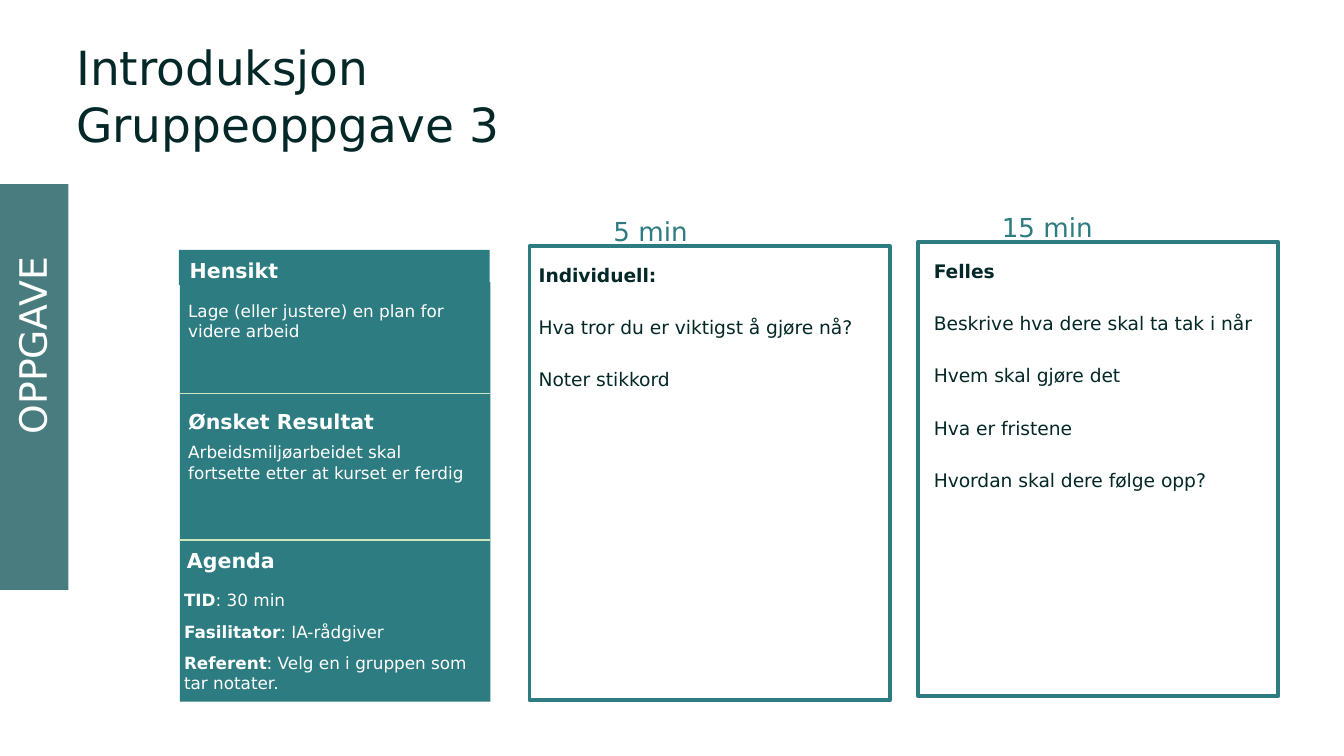
from lxml.etree import SubElement
from pptx import Presentation
from pptx.dml.color import RGBColor
from pptx.enum.shapes import MSO_CONNECTOR, MSO_SHAPE
from pptx.enum.text import MSO_ANCHOR
from pptx.oxml.ns import qn
from pptx.util import Pt

FONT = "DejaVu Sans"
TEAL = "2D7C81"
GREY_TEAL = "497C7F"
DARK = "042827"
WHITE = "FFFFFF"
PALE_GREEN = "CFE5BD"


def color(value):
    """Turn a hex string into a colour."""
    return RGBColor.from_string(value)


def add_rectangle(slide, left, top, width, height, fill=None, line=None):
    """Add a plain rectangle with an optional fill and outline."""
    shape = slide.shapes.add_shape(
        MSO_SHAPE.RECTANGLE, Pt(left), Pt(top), Pt(width), Pt(height))
    shape.shadow.inherit = False
    if fill:
        shape.fill.solid()
        shape.fill.fore_color.rgb = color(fill)
    else:
        shape.fill.background()
    if line:
        shape.line.color.rgb = color(line)
        shape.line.width = Pt(2)
    else:
        shape.line.fill.background()
    return shape


def add_text(slide, box, paragraphs, size, ink, margins=(7.2, 3.6, 7.2, 3.6),
             anchor=MSO_ANCHOR.TOP, line_spacing=None, before=0, after=0):
    """Add a text box whose paragraphs are lists of (text, bold) runs."""
    shape = slide.shapes.add_textbox(*map(Pt, box))
    frame = shape.text_frame
    frame.word_wrap = True
    frame.vertical_anchor = anchor
    (frame.margin_left, frame.margin_top,
     frame.margin_right, frame.margin_bottom) = map(Pt, margins)
    for index, runs in enumerate(paragraphs):
        paragraph = frame.add_paragraph() if index else frame.paragraphs[0]
        paragraph.space_before = Pt(before)
        paragraph.space_after = Pt(after)
        if line_spacing:
            paragraph.line_spacing = line_spacing
        for text, bold in runs:
            run = paragraph.add_run()
            run.text = text
            run.font.name = FONT
            run.font.size = Pt(size)
            run.font.bold = bold
            run.font.color.rgb = color(ink)
    return shape


def add_divider(slide, left, top, width):
    """Add a thin horizontal line."""
    connector = slide.shapes.add_connector(
        MSO_CONNECTOR.STRAIGHT, Pt(left), Pt(top), Pt(left + width), Pt(top))
    connector.line.color.rgb = color(PALE_GREEN)
    connector.line.width = Pt(0.75)
    SubElement(connector.element.spPr, qn("a:effectLst"))


def add_title(slide, left, top, width, height):
    """Add the two-line slide title."""
    lines = ["Introduksjon", "Gruppeoppgave 3"]
    add_text(slide, (left, top, width, height), [[(line, False)] for line in lines],
             25.2, DARK, margins=(7.2,) * 4, anchor=MSO_ANCHOR.MIDDLE)


def add_side_tab(slide, left, top, width, height):
    """Add the tab at the slide edge with its upright label."""
    add_rectangle(slide, left, top, width, height, GREY_TEAL)
    label = add_text(slide, (left - 46.8, top + 61.2, 128, 31.7),
                     [[("OPPGAVE", False)]], 20.2, WHITE)
    label.rotation = 270


def add_overview(slide, left, top, width, height):
    """Add the filled column with purpose, result and agenda."""
    add_rectangle(slide, left + 0.5, top + 17.3, width, height - 17.3, TEAL)
    add_rectangle(slide, left, top, width, 18.7, TEAL)
    sections = [
        ("Hensikt", 5.7, 17.3, -2.2, 23.8,
         [[("Lage (eller justere) en plan for videre arbeid", False)]]),
        ("Ønsket Resultat", 5, 98.6, -2.2, 99.4,
         [[("Arbeidsmiljøarbeidet skal fortsette etter at kurset er ferdig", False)]]),
        ("Agenda", 4.3, 172.8, -4.4, 178.6,
         [[("TID", True), (": 30 min", False)],
          [("Fasilitator", True), (": IA-rådgiver", False)],
          [("Referent", True), (": Velg en i gruppen som tar notater.", False)]]),
    ]
    for heading, heading_left, heading_bottom, body_left, body_top, body in sections:
        add_text(slide, (left + heading_left, top + heading_bottom - 18, 130, 18),
                 [[(heading, True)]], 11, WHITE, margins=(0, 0.7, 0, 0),
                 anchor=MSO_ANCHOR.BOTTOM, line_spacing=1.15)
        add_text(slide, (left + body_left, top + body_top, 168, 28.8 * len(body) ** 0.7),
                 body, 9, WHITE, before=3, after=3)
    for offset in (77, 155.5):
        add_divider(slide, left, top + offset, width)


def add_panel(slide, left, top, width, height, duration, heading, steps, inset):
    """Add an outlined panel with its duration above and its steps inside."""
    add_rectangle(slide, left, top, width, height, line=TEAL)
    paragraphs = [[(heading, True)]] + [[(step, False)] for step in steps]
    add_text(slide, (left + inset, top + 0.5, 200, height - 24), paragraphs, 10, DARK,
             margins=(7.2,) * 4, line_spacing=1.15, after=14.2)
    add_text(slide, (left + 37.8, top - 20, 75, 24.5), [[(duration, False)]], 14, TEAL)


def main():
    """Build and save the slide."""
    presentation = Presentation()
    presentation.slide_width = Pt(720)
    presentation.slide_height = Pt(405)
    slide = presentation.slides.add_slide(presentation.slide_layouts[6])
    add_overview(slide, 95.9, 133.9, 166.4, 242)
    add_panel(slide, 283.7, 131.8, 193, 243.4, "5 min", "Individuell:",
              ["Hva tror du er viktigst å gjøre nå?", "Noter stikkord"], -2.2)
    add_panel(slide, 491.8, 129.6, 193, 243.4, "15 min", "Felles",
              ["Beskrive hva dere skal ta tak i når", "Hvem skal gjøre det",
               "Hva er fristene", "Hvordan skal dere følge opp?"], 1.4)
    add_title(slide, 33.8, 21.5, 651, 59)
    add_side_tab(slide, 0, 98.6, 36.7, 217.4)
    presentation.save("out.pptx")


if __name__ == "__main__":
    main()
